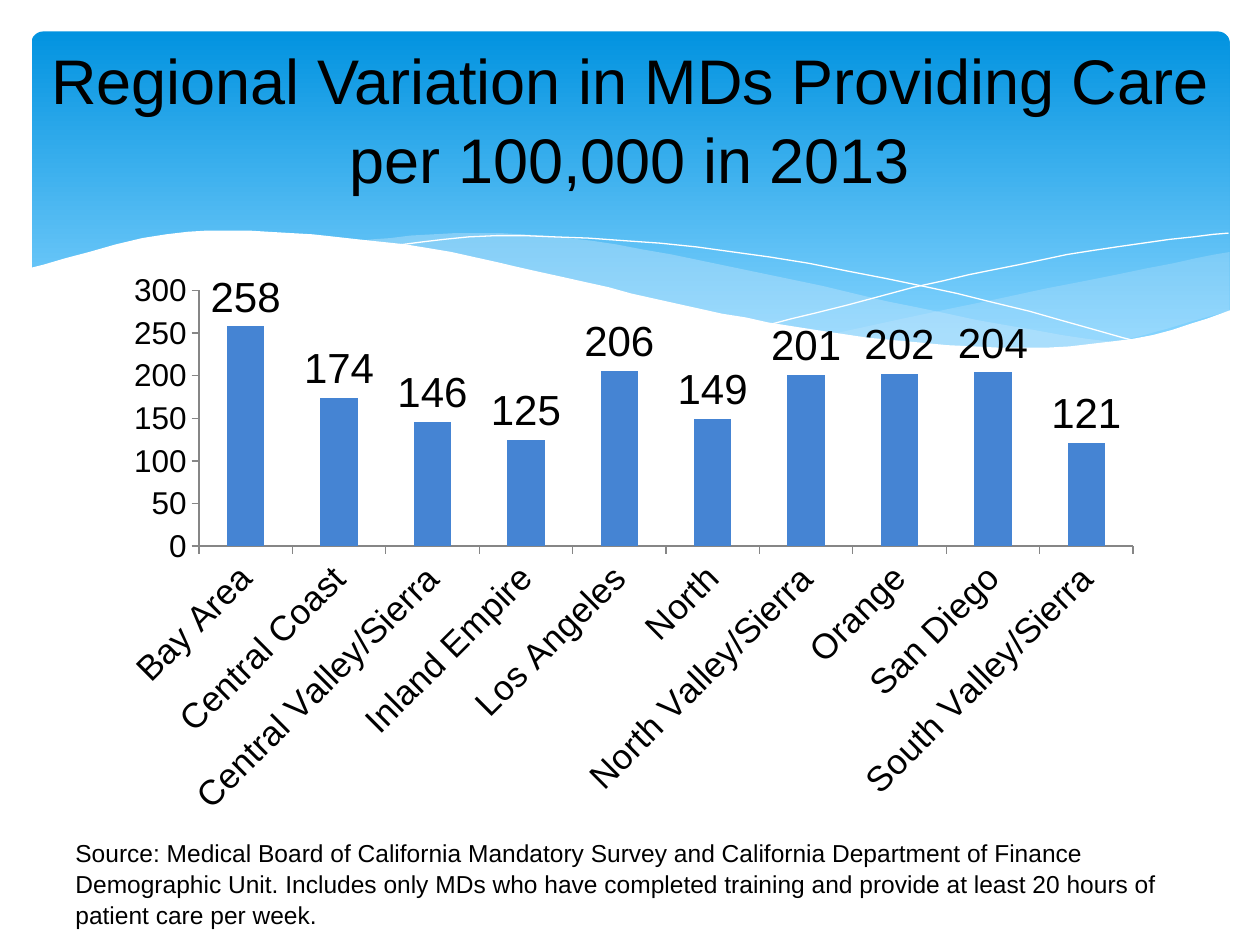
import pptx
import pptx.chart.data
import pptx.dml.color
import pptx.enum.chart
import pptx.enum.shapes
import pptx.enum.text
import pptx.oxml
import pptx.oxml.ns
import pptx.util

Pt = pptx.util.Pt
RGB = pptx.dml.color.RGBColor
BLACK = RGB(0x00, 0x00, 0x00)
WHITE = RGB(0xFF, 0xFF, 0xFF)
DEEP_BLUE = RGB(0x02, 0x93, 0xE0)
SKY_BLUE = RGB(0x83, 0xD3, 0xFE)
PALE_BLUE = RGB(0xC6, 0xE7, 0xFC)
BAR_BLUE = RGB(0x45, 0x84, 0xD3)
AXIS_GREY = RGB(0x86, 0x86, 0x86)
FONT = "Arial"
STEPS = 6

# Smooth edges through a few knots, in hundredths of an inch; fill; opacity in percent.
WAVES = [
    ([[(976, 200), (861, 223), (661, 265)],
      [(661, 265), (757, 276), (863, 275), (976, 247)]], PALE_BLUE, 29),
    ([[(893, 273), (775, 254), (629, 222), (489, 194), (380, 185), (286, 191)],
      [(286, 191), (404, 211), (566, 248), (695, 270), (796, 278), (893, 273)]],
     PALE_BLUE, 40),
    ([[(309, 195), (416, 187), (582, 200), (760, 233), (907, 272)]], None, 100),
    ([[(613, 257), (748, 223), (866, 199), (975, 185)]], None, 100),
    ([[(977, 246), (899, 269), (793, 276), (668, 265), (555, 245), (447, 220),
       (340, 197), (230, 185), (132, 186), (23, 213)],
      [(23, 329), (977, 329)]], WHITE, 100),
]
REGIONS = {
    "Bay Area": 258, "Central Coast": 174, "Central Valley/Sierra": 146,
    "Inland Empire": 125, "Los Angeles": 206, "North": 149,
    "North Valley/Sierra": 201, "Orange": 202, "San Diego": 204,
    "South Valley/Sierra": 121,
}


def smooth_edge(knots):
    """Return points on a Catmull-Rom curve through the knots."""
    padded = [knots[0], *knots, knots[-1]]
    points = [knots[0]]
    for before, start, end, after in zip(padded, padded[1:], padded[2:], padded[3:]):
        for step in range(1, STEPS + 1):
            t = step / STEPS
            points.append(tuple(
                b + t * (c - a + t * (2 * a - 5 * b + 4 * c - d
                                      + t * (3 * b - a - 3 * c + d))) / 2
                for a, b, c, d in zip(before, start, end, after)))
            # The middle term starts from b, since the weights are halved above.
    return points


def write(frame, text, size, align):
    para = frame.paragraphs[0]
    para.alignment = align
    para.line_spacing = 1.05
    span = para.add_run()
    span.text = text
    span.font.name = FONT
    span.font.size = Pt(size)
    span.font.color.rgb = BLACK


deck = pptx.Presentation()
deck.slide_width, deck.slide_height = Pt(720), Pt(540)
page = deck.slides.add_slide(deck.slide_layouts[5])
shapes = page.shapes

# Banner
banner = shapes.add_shape(pptx.enum.shapes.MSO_SHAPE.ROUNDED_RECTANGLE,
                          Pt(18), Pt(18), Pt(684.72), Pt(194.4))
banner.adjustments[0] = 0.034
banner.shadow.inherit = False
banner.line.fill.background()
banner.fill.gradient()
banner.fill.gradient_angle = 270
for stop, color, position in zip(banner.fill.gradient_stops, (DEEP_BLUE, SKY_BLUE), (0, 0.9)):
    stop.color.rgb = color
    stop.position = position

for edges, color, opacity in WAVES:
    points = [point for knots in edges for point in smooth_edge(knots)]
    builder = shapes.build_freeform(*points[0], scale=Pt(0.72))
    builder.add_line_segments(points[1:], close=color is not None)
    wave = builder.convert_to_shape()
    wave.shadow.inherit = False
    if color is None:
        wave.fill.background()
        wave.line.color.rgb = WHITE
        wave.line.width = Pt(0)
        continue
    wave.line.fill.background()
    wave.fill.solid()
    wave.fill.fore_color.rgb = color
    if opacity < 100:
        tint = wave._element.spPr.find(".//" + pptx.oxml.ns.qn("a:srgbClr"))
        tint.append(tint.makeelement(pptx.oxml.ns.qn("a:alpha"), {"val": str(opacity * 1000)}))

# Title, brought in front of the banner
title = shapes.title
shapes._spTree.append(title._element)
title.left, title.top, title.width, title.height = Pt(18), Pt(30.24), Pt(684), Pt(73.44)
title.text_frame.auto_size = pptx.enum.text.MSO_AUTO_SIZE.NONE
title.text_frame.vertical_anchor = pptx.enum.text.MSO_ANCHOR.MIDDLE
write(title.text_frame, "Regional Variation in MDs Providing Care per 100,000 in 2013",
      36, pptx.enum.text.PP_ALIGN.CENTER)

# Chart
data = pptx.chart.data.CategoryChartData(number_format="0")
data.categories = list(REGIONS)
data.add_series("Series 1", list(REGIONS.values()))
chart = shapes.add_chart(pptx.enum.chart.XL_CHART_TYPE.COLUMN_CLUSTERED,
                         Pt(59.76), Pt(149.76), Pt(599.76), Pt(324.72), data).chart
chart.has_legend = False
chart.has_title = False
chart.font.name = FONT
chart.font.size = Pt(18)
chart.font.color.rgb = BLACK

for axis, size in ((chart.category_axis, 20), (chart.value_axis, 18)):
    axis.has_major_gridlines = False
    axis.major_tick_mark = pptx.enum.chart.XL_TICK_MARK.OUTSIDE
    axis.minor_tick_mark = pptx.enum.chart.XL_TICK_MARK.NONE
    axis.format.line.color.rgb = AXIS_GREY
    axis.tick_labels.font.size = Pt(size)
chart.category_axis._element.txPr.bodyPr.set("rot", "-2700000")
chart.value_axis.minimum_scale = 0
chart.value_axis.maximum_scale = 300
chart.value_axis.major_unit = 50
chart.value_axis.tick_labels.number_format = "0"
chart.value_axis.tick_labels.number_format_is_linked = False

plot = chart.plots[0]
plot.gap_width = 150
plot.vary_by_categories = False
bars = plot.series[0]
bars.format.fill.solid()
bars.format.fill.fore_color.rgb = BAR_BLUE
plot.has_data_labels = True
labels = plot.data_labels
labels.show_value = True
labels.position = pptx.enum.chart.XL_LABEL_POSITION.OUTSIDE_END
labels.number_format = "0"
labels.number_format_is_linked = False
labels.font.size = Pt(24)

plot_area = chart._chartSpace.chart.plotArea
for old in plot_area.findall(pptx.oxml.ns.qn("c:layout")):
    plot_area.remove(old)
plot_area.insert(0, pptx.oxml.parse_xml(
    f'<c:layout {pptx.oxml.ns.nsdecls("c")}><c:manualLayout><c:layoutTarget val="inner"/>'
    '<c:xMode val="edge"/><c:yMode val="edge"/><c:x val="0.09"/><c:y val="0.05"/>'
    '<c:w val="0.89"/><c:h val="0.45"/></c:manualLayout></c:layout>'))

# Source note
note = shapes.add_textbox(Pt(36), Pt(474.48), Pt(653.76), Pt(58.32))
note.text_frame.word_wrap = True
write(note.text_frame,
      "Source: Medical Board of California Mandatory Survey and California Department of "
      "Finance Demographic Unit. Includes only MDs who have completed training and provide "
      "at least 20 hours of patient care per week.", 14, pptx.enum.text.PP_ALIGN.LEFT)

deck.save("out.pptx")
